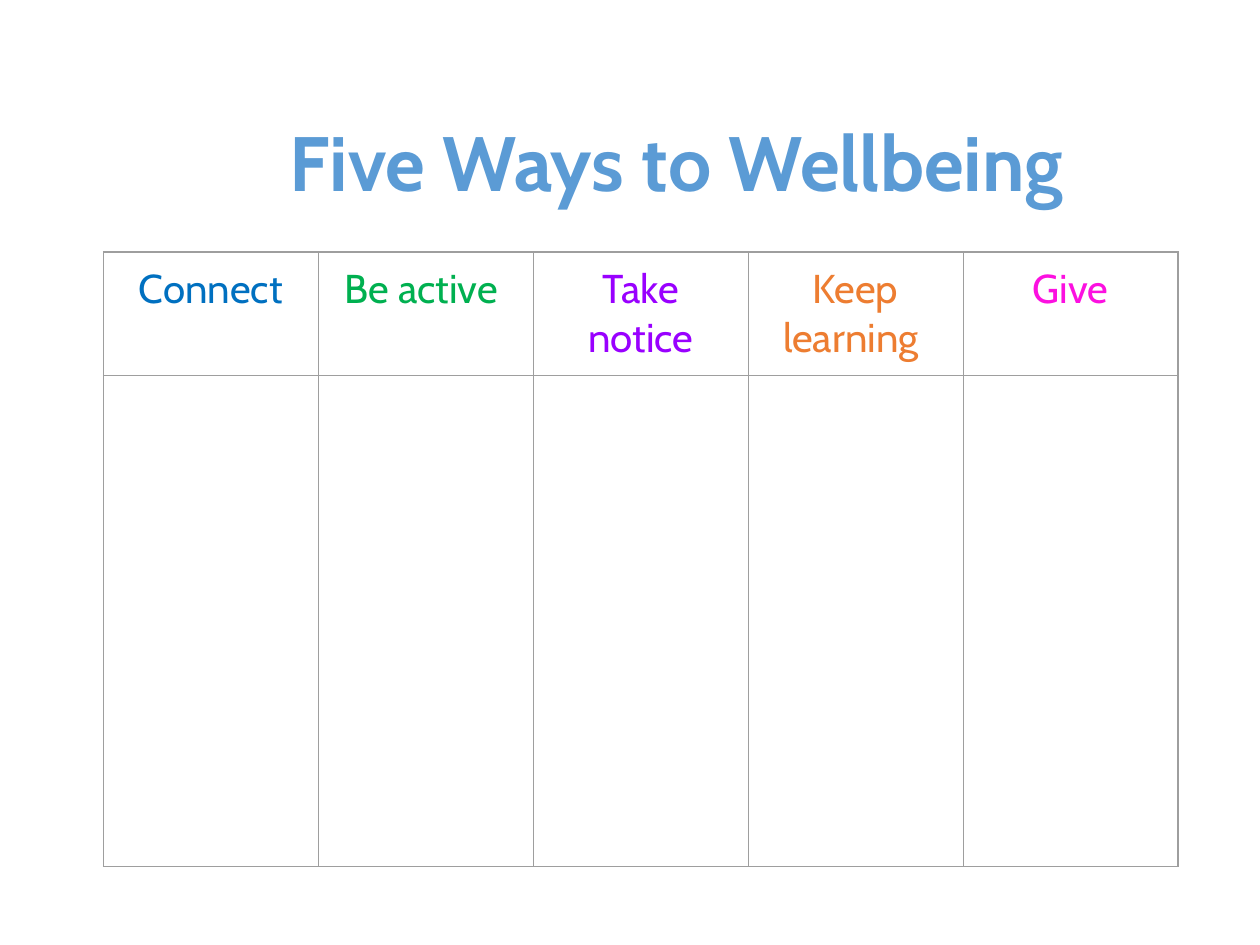
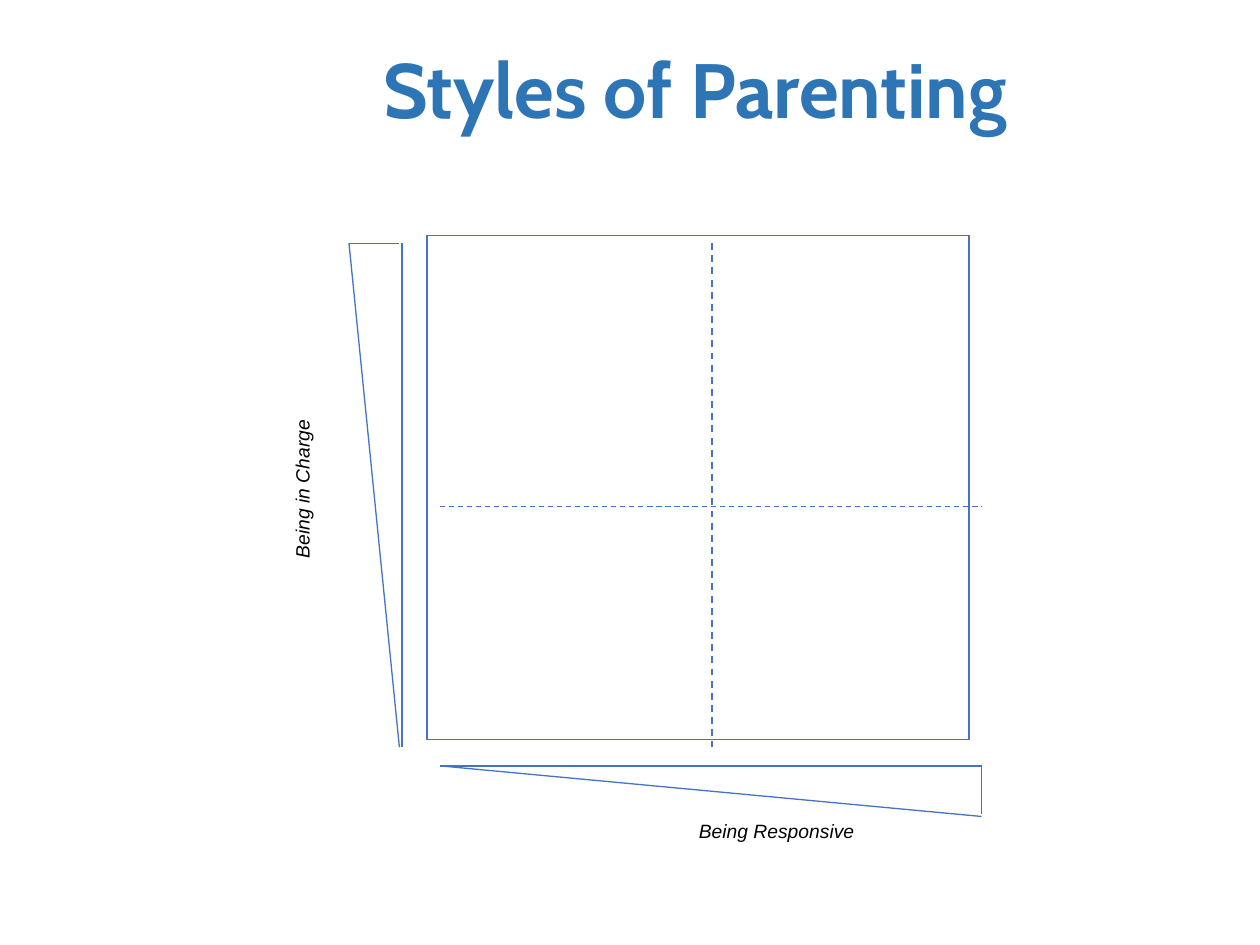
from lxml import etree
from pptx import Presentation
from pptx.dml.color import RGBColor
from pptx.enum.dml import MSO_LINE
from pptx.enum.shapes import MSO_CONNECTOR, MSO_SHAPE
from pptx.enum.text import MSO_ANCHOR, PP_ALIGN
from pptx.oxml.ns import qn
from pptx.util import Emu, Pt

RECTANGLE = MSO_SHAPE.RECTANGLE
STRAIGHT = MSO_CONNECTOR.STRAIGHT
DASH = MSO_LINE.DASH
TOP = MSO_ANCHOR.TOP
LEFT, CENTER, RIGHT = PP_ALIGN.LEFT, PP_ALIGN.CENTER, PP_ALIGN.RIGHT

HEADING_FONT, LABEL_FONT = "Cabin", "Arial"
BLACK, WHITE, BLUE, GRID_GREY = "000000", "FFFFFF", "4472C4", "9E9E9E"


def px(length):
    """100 px to the inch."""
    return Emu(length * 9144)


def colour(code):
    return RGBColor.from_string(code)


class Deck:
    def __init__(self, width, height):
        self.prs = Presentation()
        self.prs.slide_width, self.prs.slide_height = px(width), px(height)
        self.shapes = None

    def new_slide(self):
        slide = self.prs.slides.add_slide(self.prs.slide_layouts[6])
        slide.background.fill.solid()
        slide.background.fill.fore_color.rgb = colour(WHITE)
        self.shapes = slide.shapes

    def set_text(self, frame, text, font, size, code, align=LEFT, bold=False, italic=False):
        frame.word_wrap = True
        frame.vertical_anchor = TOP
        frame.text = text
        paragraph = frame.paragraphs[0]
        paragraph.alignment = align
        style = paragraph.runs[0].font
        style.name, style.size = font, Pt(size)
        style.bold, style.italic = bold, italic
        style.color.rgb = colour(code)

    def title(self, text, box, indent, code):
        frame = self.shapes.add_textbox(*map(px, box)).text_frame
        self.set_text(frame, text, HEADING_FONT, 44, code, bold=True)
        frame.margin_left = px(indent)

    def axis_label(self, text, box, rotation=0):
        label = self.shapes.add_textbox(*map(px, box))
        label.rotation = rotation
        self.set_text(label.text_frame, text, LABEL_FONT, 11, BLACK, RIGHT, italic=True)

    def rectangle(self, box):
        shape = self.shapes.add_shape(RECTANGLE, *map(px, box))
        shape.shadow.inherit = False
        shape.fill.solid()
        shape.fill.fore_color.rgb = colour(WHITE)
        shape.line.color.rgb = colour(BLUE)
        shape.line.width = Pt(0.75)

    def line(self, start, end, width=0.75, dash=None):
        connector = self.shapes.add_connector(STRAIGHT, *map(px, start + end))
        connector.line.color.rgb = colour(BLUE)
        connector.line.width = Pt(width)
        connector.line.dash_style = dash
        etree.SubElement(connector._element.spPr, qn("a:effectLst"))

    def border(self, cell):
        properties = cell._tc.get_or_add_tcPr()
        for index, side in enumerate(("lnL", "lnR", "lnT", "lnB")):
            edge = etree.Element(qn(f"a:{side}"), w=str(Pt(0.75)))
            fill = etree.SubElement(edge, qn("a:solidFill"))
            etree.SubElement(fill, qn("a:srgbClr"), val=GRID_GREY)
            properties.insert(index, edge)

    def table(self, box, headings, row_heights):
        table = self.shapes.add_table(len(row_heights), len(headings), *map(px, box)).table
        table.first_row = table.horz_banding = False
        for row, height in zip(table.rows, row_heights):
            row.height = px(height)
        for column in table.columns:
            column.width = px(box[2]) // len(headings)
        for cell in table.iter_cells():
            cell.fill.background()
            cell.margin_left = cell.margin_right = px(10)
            cell.margin_top = cell.margin_bottom = px(10)
            self.border(cell)
        for cell, (text, code) in zip(table.rows[0].cells, headings):
            self.set_text(cell.text_frame, text, HEADING_FONT, 23, code, CENTER)


def wellbeing(deck):
    deck.new_slide()
    ways = [("Connect", "0070C0"), ("Be active ", "00B050"), ("Take notice", "9900FF"),
            ("Keep learning ", "ED7D31"), ("Give", "FC10E0")]
    deck.table((82, 200, 853, 487), ways, (97, 390))
    deck.title("Five Ways to Wellbeing", (209, 86, 722, 84), 21, "5B9BD5")


def parenting(deck):
    deck.new_slide()
    # Quadrants
    left, right, top, bottom = 349, 779, 193, 593
    deck.rectangle((339, 187, 430, 400))
    deck.line((565, top), (565, bottom), width=1, dash=DASH)
    deck.line((left, 402), (right, 402), dash=DASH)

    # Axis labels
    deck.axis_label("Being Responsive", (365, 645, 323, 48))
    deck.axis_label("Being in Charge", (108, 441, 289, 54), rotation=270)

    # Wedge for being in charge
    deck.line((319, top), (319, bottom))
    deck.line((317, top), (277, top))
    deck.line((277, top), (317, bottom))

    # Wedge for being responsive
    deck.line((left, 608), (right, 608))
    deck.line((right, 608), (right, 646))
    deck.line((351, 608), (right, 648))

    deck.title("Styles of Parenting", (236, 28, 639, 84), 68, "2E75B5")


def main():
    deck = Deck(1000, 750)
    wellbeing(deck)
    parenting(deck)
    deck.prs.save("out.pptx")


if __name__ == "__main__":
    main()
